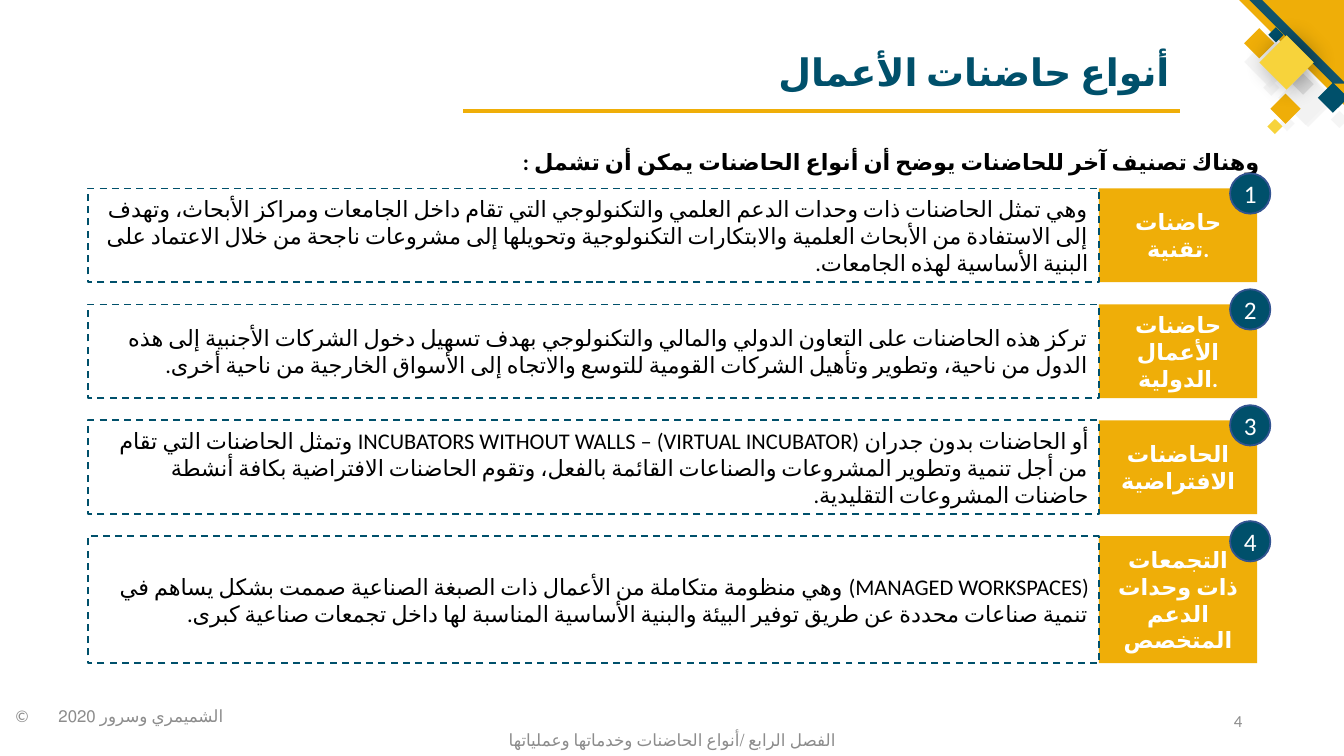
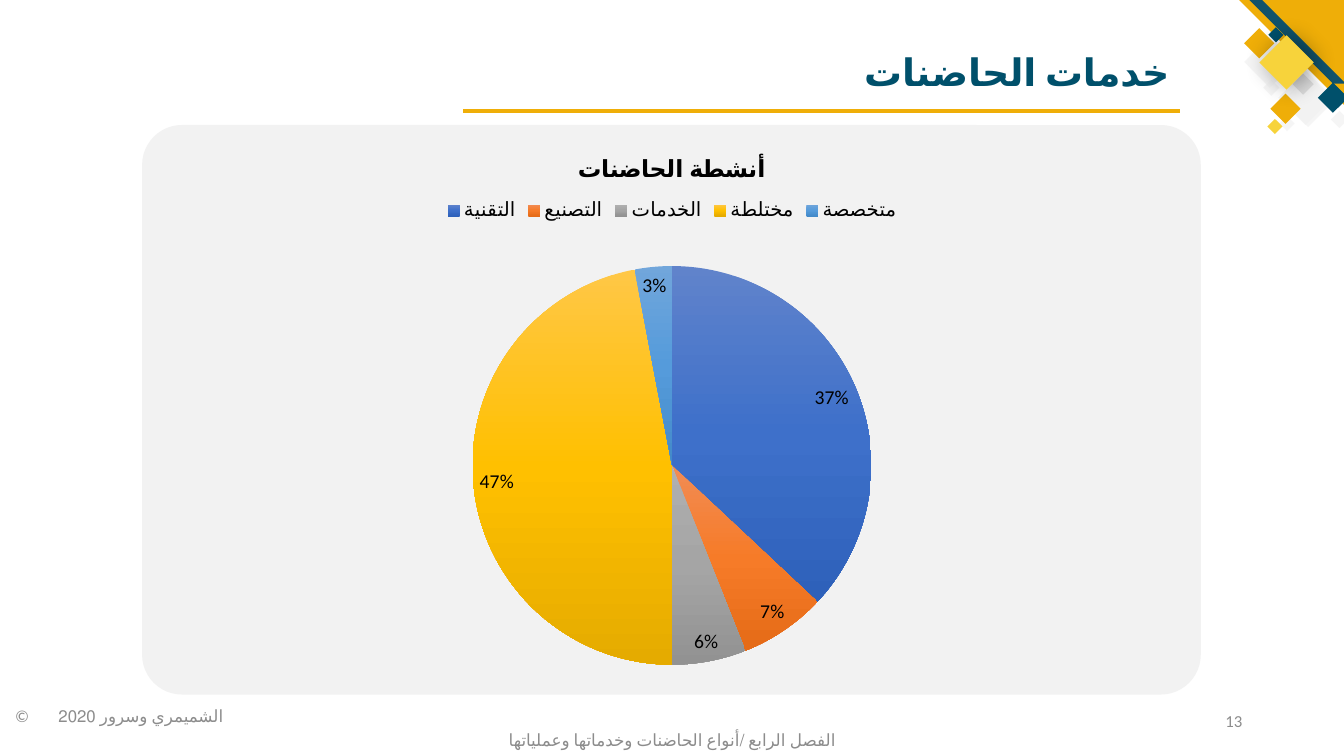
from copy import deepcopy

from lxml.etree import SubElement
from pptx import Presentation
from pptx.chart.data import CategoryChartData
from pptx.dml.color import RGBColor
from pptx.enum.chart import XL_CHART_TYPE, XL_LABEL_POSITION, XL_LEGEND_POSITION
from pptx.enum.dml import MSO_LINE
from pptx.enum.shapes import MSO_CONNECTOR, MSO_SHAPE
from pptx.enum.text import MSO_ANCHOR, MSO_AUTO_SIZE, PP_ALIGN
from pptx.oxml.ns import qn
from pptx.util import Inches, Pt

GOLD, NAVY, YELLOW, PALE = "EFAE08", "00506B", "F7D33B", "F2F2F2"
BLACK, WHITE, GREY = "000000", "FFFFFF", "8C8C8C"
FONT = "Calibri"

TITLE_BOX = (1.62, 0.51, 10.08, 0.48)
COPYRIGHT_BOX = (0, 6.85, 2.35, 0.5)
FOOTER_BOX = (4.42, 7.14, 4.5, 0.4)
NUMBER_BOX = (9.42, 6.95, 3, 0.4)
FOOTER = "الفصل الرابع /أنواع الحاضنات وخدماتها وعملياتها"
COPYRIGHT = "©\tالشميمري وسرور 2020"

DIAMONDS_BEHIND = [
    (12.68, 0.7, 0.54, PALE, 72), (13.2, 1.1, 0.17, PALE, 72),
    (12.72, 0.75, 0.51, PALE, 72), (12.69, 1.15, 0.15, PALE, 72),
    (12.53, 0.79, 0.16, PALE, 72), (12.34, 0.36, 0.51, PALE, 72),
    (12.34, 0.28, 0.3, GOLD, 100),
]
DIAMONDS_FRONT = [
    (13.07, 0.82, 0.3, NAVY, 100), (12.6, 0.93, 0.3, GOLD, 100),
    (12.58, 0.27, 0.15, NAVY, 100), (12.57, 1.18, 0.15, YELLOW, 100),
    (12.82, 0.73, 0.21, "D9D9D9", 92),
]

INCUBATORS = [
    ("حاضنات تقنية.", 0.93,
     "وهي تمثل الحاضنات ذات وحدات الدعم العلمي والتكنولوجي التي تقام داخل الجامعات ومراكز الأبحاث، "
     "وتهدف إلى الاستفادة من الأبحاث العلمية والابتكارات التكنولوجية وتحويلها إلى مشروعات ناجحة "
     "من خلال الاعتماد على البنية الأساسية لهذه الجامعات."),
    ("حاضنات الأعمال الدولية.", 0.93,
     "تركز هذه الحاضنات على التعاون الدولي والمالي والتكنولوجي بهدف تسهيل دخول الشركات الأجنبية "
     "إلى هذه الدول من ناحية، وتطوير وتأهيل الشركات القومية للتوسع والاتجاه إلى الأسواق الخارجية "
     "من ناحية أخرى."),
    ("الحاضنات الافتراضية", 0.93,
     "أو الحاضنات بدون جدران INCUBATORS WITHOUT WALLS – (VIRTUAL INCUBATOR) وتمثل الحاضنات التي تقام "
     "من أجل تنمية وتطوير المشروعات والصناعات القائمة بالفعل، وتقوم الحاضنات الافتراضية بكافة أنشطة "
     "حاضنات المشروعات التقليدية."),
    ("التجمعات ذات وحدات الدعم المتخصص", 1.26,
     "(MANAGED WORKSPACES) وهي منظومة متكاملة من الأعمال ذات الصبغة الصناعية صممت بشكل يساهم في "
     "تنمية صناعات محددة عن طريق توفير البيئة والبنية الأساسية المناسبة لها داخل تجمعات صناعية كبرى."),
]

ACTIVITIES = [
    ("التقنية", 37, "6083CB", "3E70CA", "2E61BA"),
    ("التصنيع", 7, "F18C55", "F67B28", "E56B17"),
    ("الخدمات", 6, "AFAFAF", "A5A5A5", "929292"),
    ("مختلطة", 47, "FFC746", "FFC000", "E5AB00"),
    ("متخصصة", 3, "71A6DB", "559BDB", "438AC9"),
]


def color(value):
    """Turn a hex string into a colour."""
    return RGBColor.from_string(value)


def apply(target, formats):
    """Set every attribute named in the formats."""
    for name, value in formats.items():
        setattr(target, name, value)


def inches(box):
    """Convert a box of numbers to lengths."""
    return [Inches(length) for length in box]


def write(shape, text, size, ink, align=PP_ALIGN.CENTER, bold=False, rtl=False,
          anchor=MSO_ANCHOR.MIDDLE, tab=None, complex_font=True, frame=None, spacing=None):
    """Fill a shape with one formatted paragraph."""
    apply(shape.text_frame, {"word_wrap": True, "auto_size": MSO_AUTO_SIZE.NONE,
                             "vertical_anchor": anchor, **(frame or {})})
    paragraph = shape.text_frame.paragraphs[0]
    apply(paragraph, {"alignment": align, **(spacing or {})})
    properties = paragraph._p.get_or_add_pPr()
    if rtl:
        properties.set("rtl", "1")
    if tab:
        tabs = SubElement(properties, qn("a:tabLst"))
        SubElement(tabs, qn("a:tab"), pos=str(Inches(tab)), algn="l")
    run = paragraph.add_run()
    run.text = text
    apply(run.font, {"name": FONT, "size": Pt(size), "bold": bold})
    run.font.color.rgb = color(ink)
    run_properties = run._r.get_or_add_rPr()
    run_properties.set("lang", "ar-SA")
    if complex_font:
        SubElement(run_properties, qn("a:cs"), typeface=FONT)


def add_text(slide, box, text, size, ink, **options):
    """Add a text box with one paragraph."""
    write(slide.shapes.add_textbox(*inches(box)), text, size, ink, **options)


def add_box(shapes, kind, box, fill=None, line=None, opacity=100):
    """Add a preset shape without shadow."""
    shape = shapes.add_shape(kind, *inches(box))
    shape.shadow.inherit = False
    if fill:
        shape.fill.solid()
        shape.fill.fore_color.rgb = color(fill)
    else:
        shape.fill.background()
    if opacity < 100:
        tint = shape._element.spPr.find(".//" + qn("a:srgbClr"))
        SubElement(tint, qn("a:alpha"), val=str(opacity * 1000))
    if line:
        shape.line.color.rgb = color(line)
        shape.line.width = Pt(1.25)
    else:
        shape.line.fill.background()
    return shape


def add_diamonds(shapes, diamonds):
    """Add a list of square diamonds."""
    for left, top, side, fill, opacity in diamonds:
        add_box(shapes, MSO_SHAPE.DIAMOND, (left, top, side, side), fill, opacity=opacity)


def add_corner(slide):
    """Draw the corner ornament."""
    shapes = slide.shapes.add_group_shape().shapes
    add_diamonds(shapes, DIAMONDS_BEHIND)
    triangle = add_box(shapes, MSO_SHAPE.RIGHT_TRIANGLE, (12.29, 0, 1.1, 1.1), GOLD)
    triangle.rotation = 180
    stripe = add_box(shapes, MSO_SHAPE.PARALLELOGRAM, (12.24, 0.37, 1.26, 0.09), "11526A")
    stripe.adjustments[0] = 0.98
    stripe.rotation = 45
    add_diamonds(shapes, DIAMONDS_FRONT)
    centre = add_box(shapes, MSO_SHAPE.DIAMOND, (12.49, 0.35, 0.54, 0.54), YELLOW)
    effects = centre._element.spPr.find(qn("a:effectLst"))
    shadow = SubElement(effects, qn("a:outerShdw"), blurRad=str(Pt(17)), dist=str(Pt(3)), dir="0")
    shade = SubElement(shadow, qn("a:srgbClr"), val=BLACK)
    SubElement(shade, qn("a:alpha"), val="40000")


def add_base(presentation, title, number):
    """Add a slide with the shared title, rule, corner and footers."""
    slide = presentation.slides.add_slide(presentation.slide_layouts[5])
    rule = slide.shapes.add_connector(MSO_CONNECTOR.STRAIGHT, *inches((11.7, 1.1, 4.59, 1.1)))
    rule.line.color.rgb = color(GOLD)
    rule.line.width = Pt(3)
    SubElement(rule._element.spPr, qn("a:effectLst"))
    add_corner(slide)
    heading = slide.shapes.title
    apply(heading, dict(zip(("left", "top", "width", "height"), inches(TITLE_BOX))))
    write(heading, title, 27, NAVY, align=PP_ALIGN.RIGHT, bold=True, rtl=True,
          anchor=MSO_ANCHOR.BOTTOM, spacing={"line_spacing": 0.9})
    add_text(slide, COPYRIGHT_BOX, COPYRIGHT, 12, GREY, align=PP_ALIGN.LEFT, tab=0.43,
             complex_font=False, frame={"margin_left": Inches(0.15)})
    add_text(slide, FOOTER_BOX, FOOTER, 12, GREY, complex_font=False)
    add_text(slide, NUMBER_BOX, number, 12, GREY, align=PP_ALIGN.RIGHT)
    return slide


def add_incubator(slide, box, number, label, description):
    """Draw one numbered row inside its box."""
    left, top, width, height = box
    label_width, circle = 1.57, 0.4
    split = left + width - label_width
    shapes = slide.shapes.add_group_shape().shapes
    name = add_box(shapes, MSO_SHAPE.RECTANGLE, (split, top, label_width, height), GOLD)
    write(name, label, 16, WHITE, bold=True)
    badge = add_box(shapes, MSO_SHAPE.OVAL,
                    (left + width - 0.27, top - 0.15, circle, circle), NAVY, "325491")
    write(badge, number, 18, WHITE,
          frame=dict.fromkeys(("margin_left", "margin_right", "margin_top", "margin_bottom"), 0))
    detail = add_box(shapes, MSO_SHAPE.RECTANGLE,
                     (left, top, width - label_width, height), line=NAVY)
    detail.line.dash_style = MSO_LINE.DASH
    write(detail, description, 16, BLACK, align=PP_ALIGN.RIGHT, rtl=True)


def shade_point(point, shades):
    """Fill a pie slice with three shades from top to bottom."""
    fill = point.format.fill
    fill.gradient()
    fill.gradient_angle = 270
    first = point._element.find(".//" + qn("a:gs")) if hasattr(point, "_element") else None
    if first is None:
        first = point.format._element.find(".//" + qn("a:gs"))
    middle = deepcopy(first)
    middle.set("pos", "50000")
    first.addnext(middle)
    for stop, shade in zip(fill.gradient_stops, shades):
        stop.color.rgb = color(shade)


def add_pie(slide, box):
    """Draw the pie of activities inside its box."""
    title = "أنشطة الحاضنات"
    data = CategoryChartData()
    data.categories = [name for name, *_ in ACTIVITIES]
    data.add_series(title, [value for _, value, *_ in ACTIVITIES])
    chart = slide.shapes.add_chart(XL_CHART_TYPE.PIE, *inches(box), data).chart
    apply(chart.font, {"name": FONT, "size": Pt(14)})
    chart.font.color.rgb = color(BLACK)
    chart.has_title = True
    chart.chart_title.text_frame.text = title
    heading = chart.chart_title.text_frame.paragraphs[0].runs[0].font
    apply(heading, {"name": FONT, "size": Pt(16.8), "bold": True})
    heading.color.rgb = color(BLACK)
    chart.has_legend = True
    apply(chart.legend, {"position": XL_LEGEND_POSITION.TOP, "include_in_layout": False})
    plot = chart.plots[0]
    apply(plot, {"vary_by_categories": True, "has_data_labels": True})
    apply(plot.data_labels, {"show_percentage": True, "show_value": False,
                             "number_format": "0%", "number_format_is_linked": False,
                             "position": XL_LABEL_POSITION.BEST_FIT})
    series = plot.series[0]
    for index, (_, _, *shades) in enumerate(ACTIVITIES):
        fill = series.points[index].format.fill
        fill.gradient()
        fill.gradient_angle = 270
        first = series._element.findall(qn("c:dPt"))[index].find(".//" + qn("a:gs"))
        middle = deepcopy(first)
        middle.set("pos", "50000")
        first.addnext(middle)
        for stop, shade in zip(fill.gradient_stops, shades):
            stop.color.rgb = color(shade)
    area = chart._chartSpace.find(".//" + qn("c:plotArea"))
    layout = area.find(qn("c:layout"))
    if layout is None:
        layout = SubElement(area, qn("c:layout"))
        area.insert(0, layout)
    manual = SubElement(layout, qn("c:manualLayout"))
    for name, value in {"layoutTarget": "inner", "xMode": "edge", "yMode": "edge",
                        "x": "0.29", "y": "0.23", "w": "0.42", "h": "0.7"}.items():
        SubElement(manual, qn("c:" + name), val=value)


def build_types(presentation):
    """Build the slide of incubator types."""
    slide = add_base(presentation, "أنواع حاضنات الأعمال", "4")
    add_text(slide, (1.2, 1.3, 11.4, 0.47),
             "وهناك تصنيف آخر للحاضنات يوضح أن أنواع الحاضنات يمكن أن تشمل :", 16, BLACK,
             align=PP_ALIGN.RIGHT, bold=True, rtl=True,
             spacing={"line_spacing": 1.5, "space_after": Pt(8)})
    top, gap = 1.87, 0.22
    for number, (label, height, description) in enumerate(INCUBATORS, 1):
        add_incubator(slide, (0.87, top, 11.6, height), str(number), label, description)
        top += height + gap


def build_services(presentation):
    """Build the slide of incubator services."""
    slide = add_base(presentation, "خدمات الحاضنات", "13")
    panel = add_box(slide.shapes, MSO_SHAPE.ROUNDED_RECTANGLE, (1.41, 1.24, 10.5, 5.65), PALE)
    panel.adjustments[0] = 0.07
    add_pie(slide, (1.82, 1.34, 9.69, 5.65))


def main():
    """Build and save the presentation."""
    presentation = Presentation()
    apply(presentation, {"slide_width": Inches(13.33), "slide_height": Inches(7.5)})
    build_types(presentation)
    build_services(presentation)
    presentation.save("out.pptx")


if __name__ == "__main__":
    main()
